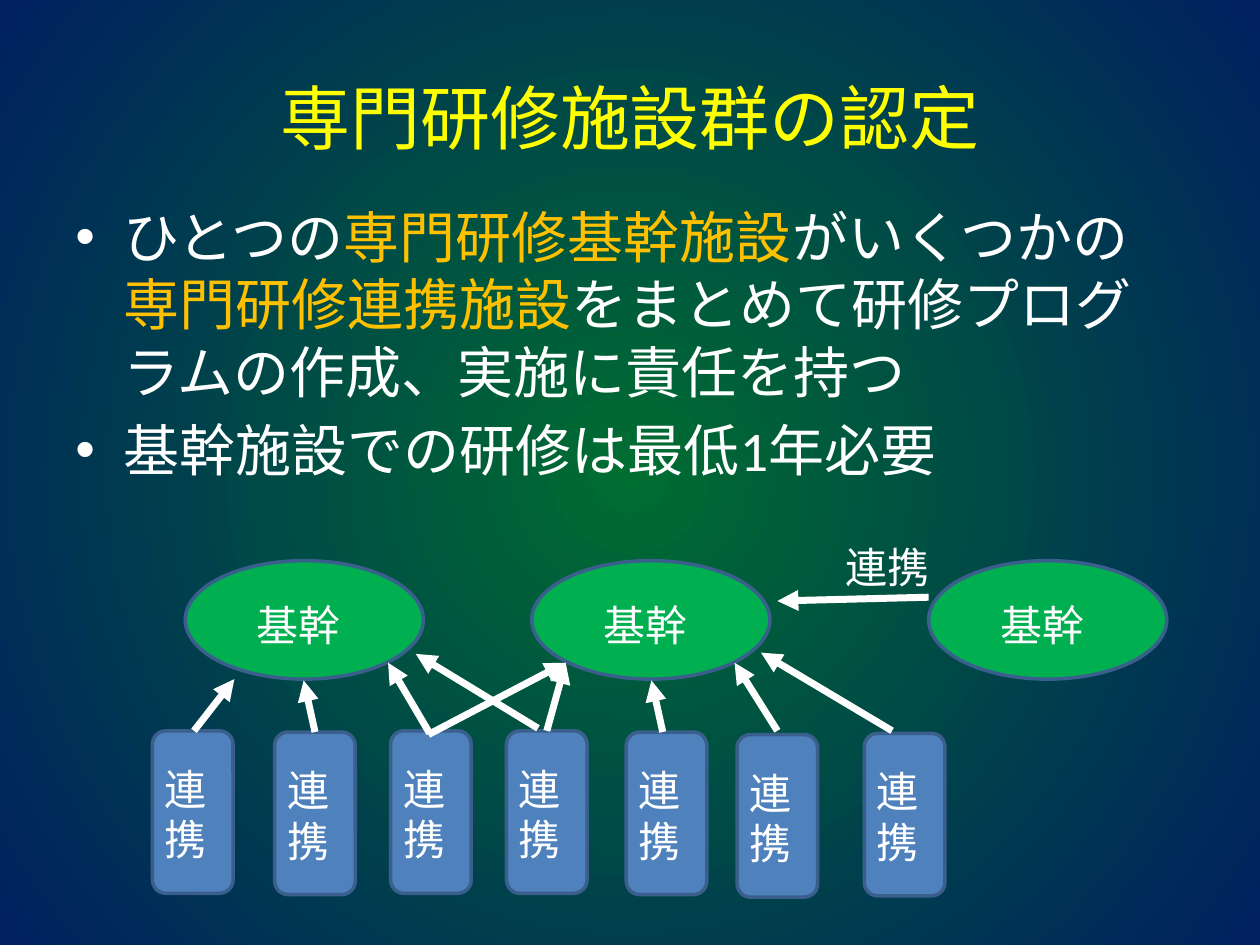
import dataclasses

import lxml.etree
import pptx
import pptx.dml.color
import pptx.enum.dml
import pptx.enum.shapes
import pptx.enum.text
import pptx.oxml.ns
import pptx.shapes.autoshape
import pptx.shapes.shapetree
import pptx.slide
import pptx.text.text
import pptx.util
from pptx.util import Inches

RGBColor = pptx.dml.color.RGBColor
WHITE = RGBColor(0xFF, 0xFF, 0xFF)
YELLOW = RGBColor(0xFF, 0xFF, 0x00)
ORANGE = RGBColor(0xFF, 0xC0, 0x00)
GREEN = RGBColor(0x00, 0xB0, 0x50)
BLUE = RGBColor(0x4F, 0x81, 0xBD)
OUTLINE = RGBColor(0x3A, 0x5F, 0x8C)
CENTER_GREEN = RGBColor(0x00, 0x6D, 0x31)
EDGE_NAVY = RGBColor(0x00, 0x20, 0x60)
FONT = "Calibri"


@dataclasses.dataclass(frozen=True)
class FacilityStyle:
    text: str
    shape_type: pptx.enum.shapes.MSO_SHAPE
    fill: RGBColor
    size: tuple[float, float]
    label_offset: tuple[float, float]
    label_size: tuple[float, float]


@dataclasses.dataclass(frozen=True)
class Facility:
    style: FacilityStyle
    left: float
    top: float


@dataclasses.dataclass(frozen=True)
class Arrow:
    start: tuple[float, float]
    end: tuple[float, float]


CORE = FacilityStyle("基幹", pptx.enum.shapes.MSO_SHAPE.OVAL, GREEN,
                     (1.89, 0.94), (0.47, 0.26), (1.26, 0.5))
PARTNER = FacilityStyle("連携", pptx.enum.shapes.MSO_SHAPE.ROUNDED_RECTANGLE, BLUE,
                        (0.64, 1.29), (0, 0.21), (0.51, 1.08))

FACILITIES = [
    *(Facility(CORE, left, 4.45) for left in (1.47, 4.22, 7.37)),
    Facility(PARTNER, 1.21, 5.8),
    Facility(PARTNER, 2.18, 5.81),
    Facility(PARTNER, 3.1, 5.8),
    Facility(PARTNER, 4.02, 5.8),
    Facility(PARTNER, 4.97, 5.81),
    Facility(PARTNER, 5.85, 5.83),
    Facility(PARTNER, 6.86, 5.82),
]

ARROWS = [
    Arrow((1.54, 5.8), (1.86, 5.39)),
    Arrow((2.5, 5.81), (2.41, 5.4)),
    Arrow((3.41, 5.82), (3.08, 5.26)),
    Arrow((3.4, 5.83), (4.49, 5.26)),
    Arrow((4.27, 5.78), (3.3, 5.19)),
    Arrow((4.34, 5.8), (4.49, 5.26)),
    Arrow((5.26, 5.81), (5.17, 5.4)),
    Arrow((6.17, 5.8), (5.83, 5.26)),
    Arrow((7.08, 5.8), (6.04, 5.18)),
    Arrow((7.37, 4.74), (6.17, 4.77)),
]

BULLETS = [
    [
        ("ひとつの", WHITE),
        ("専門研修基幹施設", ORANGE),
        ("がいくつかの", WHITE),
        ("専門研修連携施設", ORANGE),
        ("をまとめて研修プログラムの作成、実施に責任を持つ", WHITE),
    ],
    [("基幹施設での研修は最低1年必要", WHITE)],
]


def add_element(parent: lxml.etree.ElementBase, tag: str, **attributes: str) -> lxml.etree.ElementBase:
    return lxml.etree.SubElement(parent, pptx.oxml.ns.qn(tag), attributes)


def format_paragraph(paragraph: pptx.text.text._Paragraph, size: float, color: RGBColor) -> None:
    paragraph.font.name = FONT
    paragraph.font.size = pptx.util.Pt(size)
    paragraph.font.color.rgb = color


def paint_background(slide: pptx.slide.Slide) -> None:
    fill = slide.background.fill
    fill.gradient()
    for stop, color, position in zip(fill.gradient_stops, (CENTER_GREEN, EDGE_NAVY), (0, 1)):
        stop.color.rgb = color
        stop.position = position
    linear = next(slide.background._cSld.iter(pptx.oxml.ns.qn("a:lin")))
    gradient = linear.getparent()
    gradient.remove(linear)
    radial = add_element(gradient, "a:path", path="circle")
    add_element(radial, "a:fillToRect", l="50000", t="50000", r="50000", b="50000")


def add_title(slide: pptx.slide.Slide) -> None:
    title = slide.shapes.title
    title.left, title.top, title.width, title.height = map(Inches, (0.5, 0.3, 9, 1.25))
    title.text_frame.text = "専門研修施設群の認定"
    title.text_frame.vertical_anchor = pptx.enum.text.MSO_ANCHOR.MIDDLE
    paragraph = title.text_frame.paragraphs[0]
    paragraph.alignment = pptx.enum.text.PP_ALIGN.CENTER
    format_paragraph(paragraph, 40, YELLOW)


def add_bullets(slide: pptx.slide.Slide) -> None:
    box = slide.shapes.add_textbox(*map(Inches, (0.5, 1.56, 9, 4.45)))
    frame = box.text_frame
    frame.word_wrap = True
    for index, parts in enumerate(BULLETS):
        paragraph = frame.add_paragraph() if index else frame.paragraphs[0]
        paragraph.space_before = pptx.util.Pt(6.4)
        properties = paragraph._p.get_or_add_pPr()
        properties.set("marL", str(Inches(0.38)))
        properties.set("indent", str(-Inches(0.38)))
        add_element(properties, "a:buFont", typeface="Arial")
        add_element(properties, "a:buChar", char="•")
        format_paragraph(paragraph, 32, WHITE)
        for text, color in parts:
            run = paragraph.add_run()
            run.text = text
            run.font.color.rgb = color


def add_label(shapes: pptx.shapes.shapetree._BaseGroupShapes, text: str,
              left: float, top: float, width: float, height: float) -> None:
    box = shapes.add_textbox(*map(Inches, (left, top, width, height)))
    box.text_frame.word_wrap = True
    box.text_frame.text = text
    format_paragraph(box.text_frame.paragraphs[0], 24, WHITE)


def add_facility(slide: pptx.slide.Slide, facility: Facility) -> None:
    style = facility.style
    shapes = slide.shapes.add_group_shape().shapes
    shape = shapes.add_shape(style.shape_type,
                             *map(Inches, (facility.left, facility.top, *style.size)))
    shape.shadow.inherit = False
    shape.fill.solid()
    shape.fill.fore_color.rgb = style.fill
    shape.line.color.rgb = OUTLINE
    shape.line.width = pptx.util.Pt(2)
    offset_left, offset_top = style.label_offset
    add_label(shapes, style.text, facility.left + offset_left,
              facility.top + offset_top, *style.label_size)


def add_arrow(slide: pptx.slide.Slide, arrow: Arrow) -> None:
    connector = slide.shapes.add_connector(pptx.enum.shapes.MSO_CONNECTOR.STRAIGHT,
                                           *map(Inches, (*arrow.start, *arrow.end)))
    connector.line.color.rgb = WHITE
    connector.line.width = pptx.util.Pt(4)
    add_element(connector.line._get_or_add_ln(), "a:tailEnd", type="triangle")
    add_element(connector._element.spPr, "a:effectLst")


def main() -> None:
    presentation = pptx.Presentation()
    presentation.slide_width = Inches(10)
    presentation.slide_height = Inches(7.5)
    slide = presentation.slides.add_slide(presentation.slide_layouts.get_by_name("Title Only"))
    paint_background(slide)
    add_title(slide)
    add_bullets(slide)
    for facility in FACILITIES:
        add_facility(slide, facility)
    for arrow in ARROWS:
        add_arrow(slide, arrow)
    add_label(slide.shapes, "連携", 6.61, 4.25, 0.95, 0.5)
    presentation.save("out.pptx")


if __name__ == "__main__":
    main()
